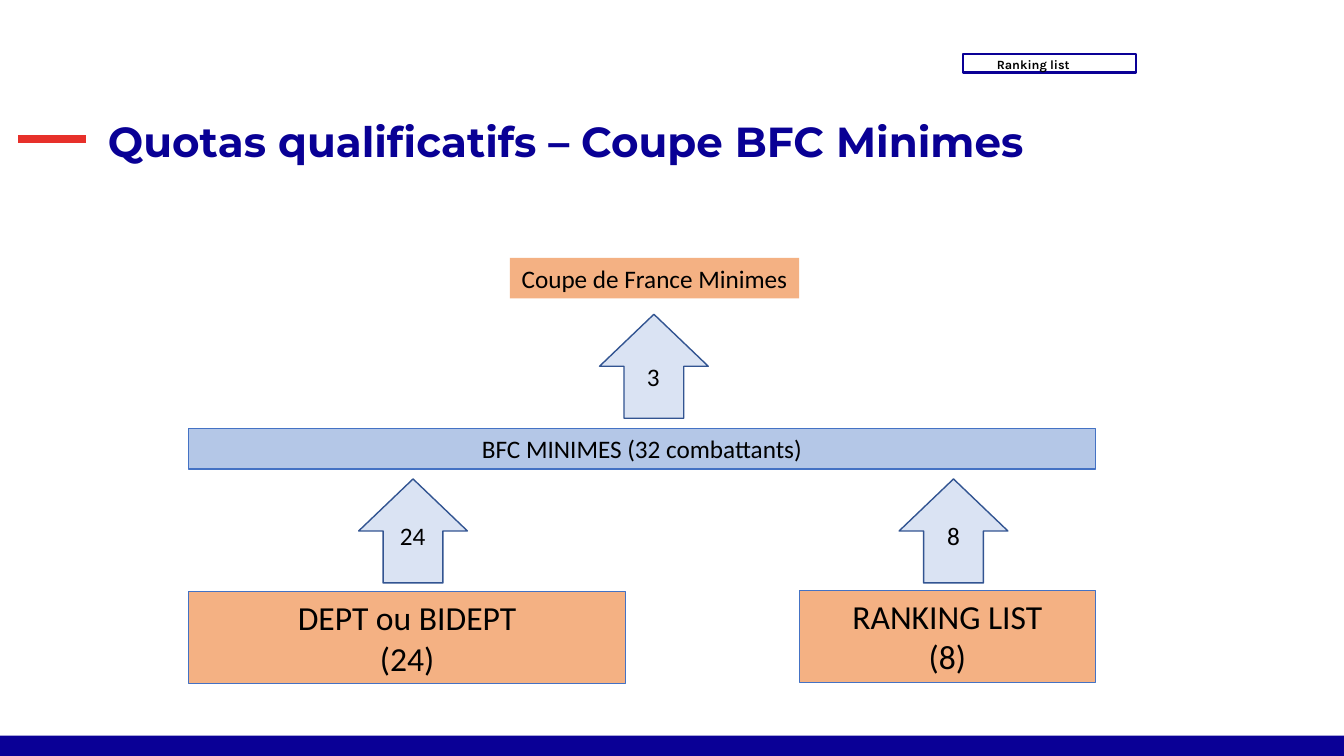
from dataclasses import dataclass
from typing import Optional

from lxml.etree import SubElement
from pptx import Presentation
from pptx.dml.color import RGBColor
from pptx.enum.shapes import MSO_CONNECTOR, MSO_SHAPE
from pptx.enum.text import MSO_ANCHOR, MSO_AUTO_SIZE, PP_ALIGN
from pptx.oxml.ns import qn
from pptx.shapes.autoshape import Shape
from pptx.slide import Slide
from pptx.text.text import TextFrame
from pptx.util import Cm, Pt


@dataclass(frozen=True)
class Theme:
    navy: str = "0A0096"
    title: str = "090095"
    red: str = "E7302A"
    text: str = "000000"
    orange: str = "F4B183"
    blue: str = "B4C7E7"
    pale: str = "DAE3F3"
    stage_edge: str = "4472C4"
    arrow_edge: str = "325491"
    title_font: str = "Montserrat"
    badge_font: str = "Karla"
    body_font: str = "Calibri"
    title_size: float = 30
    source_size: float = 24
    body_size: float = 18
    badge_size: float = 9


THEME = Theme()


@dataclass(frozen=True)
class Box:
    left: float
    top: float
    width: float
    height: float

    def lengths(self) -> tuple[Cm, Cm, Cm, Cm]:
        return Cm(self.left), Cm(self.top), Cm(self.width), Cm(self.height)


@dataclass(frozen=True)
class Stage:
    wording: str
    box: Box
    fill: str
    edge: Optional[str] = THEME.stage_edge
    size: float = THEME.body_size


@dataclass(frozen=True)
class Quota:
    count: str
    arrow_left: float
    arrow_top: float
    count_left: float
    count_top: float


STAGES = (
    Stage("BFC MINIMES (32 combattants)", Box(4.75, 10.8, 22.86, 1.02), THEME.blue),
    Stage("RANKING LIST\n(8)", Box(20.14, 14.88, 7.47, 2.31), THEME.orange,
          size=THEME.source_size),
    Stage("DEPT ou BIDEPT\n(24)", Box(4.75, 14.91, 11.02, 2.31), THEME.orange,
          size=THEME.source_size),
    Stage("Coupe de France Minimes", Box(12.85, 6.5, 7.29, 1.02), THEME.orange, edge=None),
)

QUOTAS = (
    Quota("24", 9.04, 12.07, 9.83, 12.98),
    Quota("8", 22.66, 12.07, 23.62, 12.98),
    Quota("3", 15.11, 7.92, 16.05, 8.97),
)


def rgb(colour: str) -> RGBColor:
    return RGBColor.from_string(colour)


def write(frame: TextFrame, wording: str, font: str, size: float, colour: str = THEME.text,
          bold: bool = False, align: PP_ALIGN = PP_ALIGN.LEFT) -> None:
    frame.text = wording
    for paragraph in frame.paragraphs:
        paragraph.alignment = align
        paragraph.font.name = font
        paragraph.font.size = Pt(size)
        paragraph.font.bold = bold
        paragraph.font.color.rgb = rgb(colour)


def clear_margins(frame: TextFrame) -> None:
    frame.margin_left = frame.margin_top = frame.margin_right = frame.margin_bottom = 0


def add_block(slide: Slide, kind: MSO_SHAPE, box: Box, fill: Optional[str] = None,
              edge: Optional[str] = None, edge_width: float = 0.75) -> Shape:
    block = slide.shapes.add_shape(kind, *box.lengths())
    block.shadow.inherit = False
    if fill:
        block.fill.solid()
        block.fill.fore_color.rgb = rgb(fill)
    else:
        block.fill.background()
    if edge:
        block.line.color.rgb = rgb(edge)
        block.line.width = Pt(edge_width)
    else:
        block.line.fill.background()
    return block


def add_badge(slide: Slide) -> None:
    badge = add_block(slide, MSO_SHAPE.RECTANGLE, Box(24.26, 1.37, 4.37, 0.46),
                      edge=THEME.navy, edge_width=1.5)
    frame = badge.text_frame
    clear_margins(frame)
    frame.margin_left = Cm(0.86)
    frame.vertical_anchor = MSO_ANCHOR.TOP
    write(frame, "Ranking list", THEME.badge_font, THEME.badge_size, bold=True)
    frame.paragraphs[0].line_spacing = 1.15


def add_heading(slide: Slide) -> None:
    dash = slide.shapes.add_connector(MSO_CONNECTOR.STRAIGHT, Cm(0.46), Cm(3.5), Cm(2.16), Cm(3.5))
    dash.line.color.rgb = rgb(THEME.red)
    dash.line.width = Pt(6)
    SubElement(dash.element.spPr, qn("a:effectLst"))

    heading = slide.shapes.title
    heading.left, heading.top, heading.width, heading.height = Box(2.72, 2.72, 27.53, 1.47).lengths()
    frame = heading.text_frame
    clear_margins(frame)
    frame.word_wrap = True
    frame.auto_size = MSO_AUTO_SIZE.NONE
    frame.vertical_anchor = MSO_ANCHOR.BOTTOM
    write(frame, "Quotas qualificatifs – Coupe BFC Minimes", THEME.title_font,
          THEME.title_size, THEME.title, bold=True)
    frame.paragraphs[0].line_spacing = 0.9


def add_stage(slide: Slide, stage: Stage) -> None:
    block = add_block(slide, MSO_SHAPE.RECTANGLE, stage.box, stage.fill, stage.edge)
    write(block.text_frame, stage.wording, THEME.body_font, stage.size, align=PP_ALIGN.CENTER)


def add_quota(slide: Slide, quota: Quota) -> None:
    arrow = add_block(slide, MSO_SHAPE.UP_ARROW, Box(quota.arrow_left, quota.arrow_top, 2.74, 2.62),
                      THEME.pale, THEME.arrow_edge, 1)
    arrow.adjustments[0] = 0.55
    arrow.adjustments[1] = 0.5
    count = slide.shapes.add_textbox(*Box(quota.count_left, quota.count_top, 1.57, 1.02).lengths())
    count.text_frame.word_wrap = True
    write(count.text_frame, quota.count, THEME.body_font, THEME.body_size)


def main() -> None:
    deck = Presentation()
    deck.slide_width, deck.slide_height = Cm(33.87), Cm(19.05)
    slide = deck.slides.add_slide(deck.slide_layouts.get_by_name("Title Only"))
    add_block(slide, MSO_SHAPE.RECTANGLE, Box(0, 18.54, 33.87, 0.51), THEME.navy)
    add_badge(slide)
    add_heading(slide)
    for stage in STAGES:
        add_stage(slide, stage)
    for quota in QUOTAS:
        add_quota(slide, quota)
    deck.save("out.pptx")


if __name__ == "__main__":
    main()
